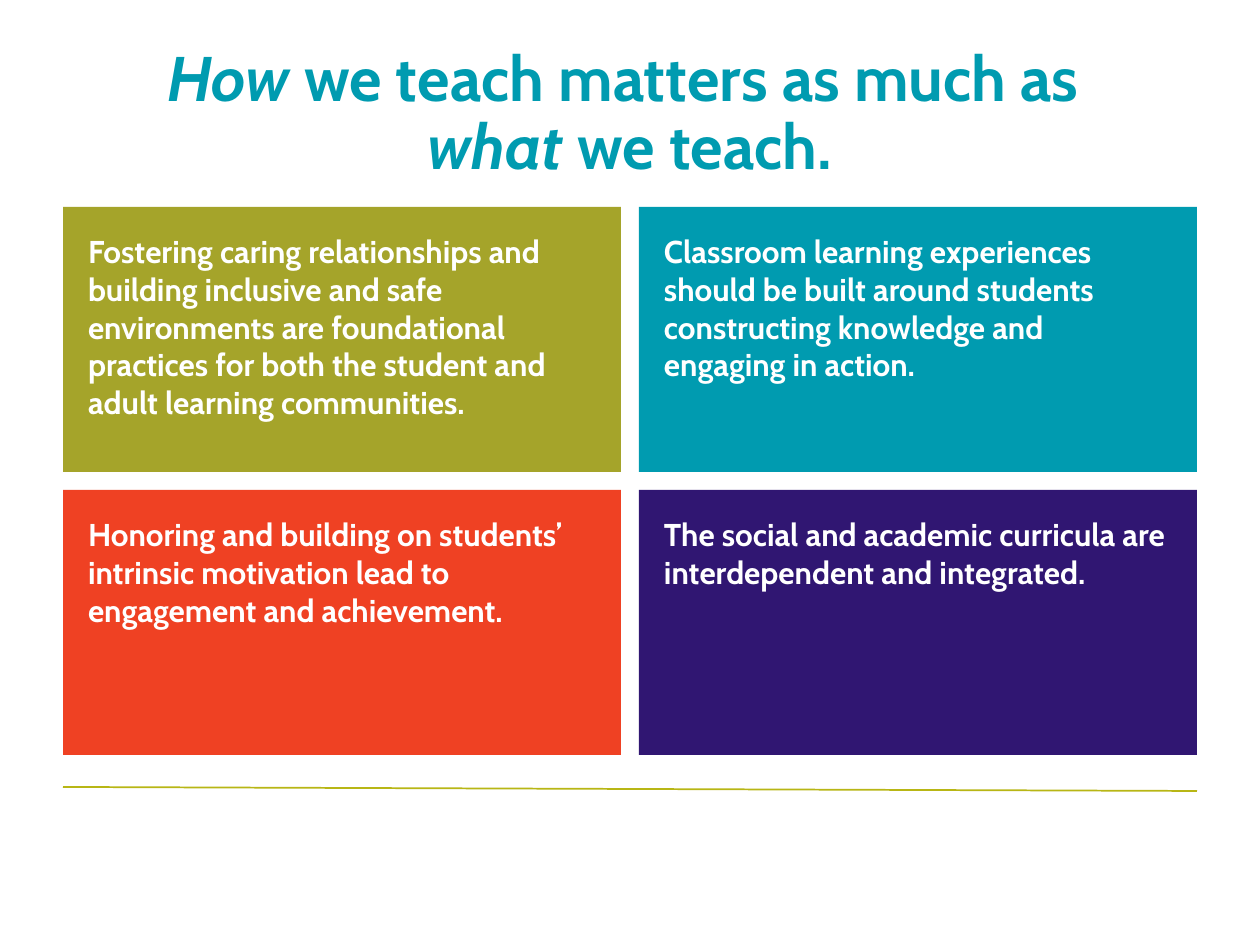
from lxml.etree import SubElement
from pptx import Presentation
from pptx.dml.color import RGBColor
from pptx.enum.shapes import MSO_CONNECTOR as Line, MSO_SHAPE as Shape
from pptx.enum.text import MSO_ANCHOR as Anchor, PP_ALIGN as Align
from pptx.oxml.ns import qn
from pptx.util import Pt

PX = 914400 / 126


def px(*nums):
    """Turn pixel lengths into a list of EMU."""
    return [round(n * PX) for n in nums]


def style(font, size, color):
    font.name, font.size, font.bold = "Cabin", Pt(size), True
    font.color.rgb = RGBColor.from_string(color)


prs = Presentation()
prs.slide_width, prs.slide_height = px(1260, 945)
slide = prs.slides.add_slide(prs.slide_layouts[6])
shapes = slide.shapes

rule = shapes.add_connector(Line.STRAIGHT, *px(63, 787, 1197, 791))
rule.line.color.rgb = RGBColor.from_string("B8B615")
rule.line.width = Pt(1)
SubElement(rule._element.spPr, qn("a:effectLst"))

title = shapes.add_textbox(*px(63, 43, 1134, 144)).text_frame
title.word_wrap = True
title.vertical_anchor = Anchor.MIDDLE
head = title.paragraphs[0]
head.alignment = Align.CENTER
head.line_spacing = 0.9
for word, rest in [("How", " we teach matters as much as "), ("what", " we teach.")]:
    if head.runs:
        head.add_line_break()
    for text, slant in [(word, True), (rest, False)]:
        run = head.add_run()
        run.text = text
        style(run.font, 36, "009BB0")
        run.font.italic = slant

cards = [
    ("A5A42A", "Fostering caring relationships and building inclusive and safe "
     "environments are foundational practices for both the student and adult "
     "learning communities."),
    ("009BB0", "Classroom learning experiences should be built around students "
     "constructing knowledge and engaging in action."),
    ("EF4123", "Honoring and building on students’ intrinsic motivation lead to "
     "engagement and achievement."),
    ("301672", "The social and academic curricula are interdependent and integrated."),
]
wide, high, gap = 558, 265, 18
for i, (color, text) in enumerate(cards):
    row, col = divmod(i, 2)
    left, top = 63 + col * (wide + gap), 207 + row * (high + gap)
    card = shapes.add_shape(Shape.RECTANGLE, *px(left, top, wide, high))
    card.shadow.inherit = False
    card.fill.solid()
    card.fill.fore_color.rgb = RGBColor.from_string(color)
    card.line.fill.background()
    frame = card.text_frame
    frame.word_wrap = True
    frame.vertical_anchor = Anchor.TOP
    frame.margin_left, frame.margin_top, frame.margin_right, frame.margin_bottom = px(25, 25, 25, 25)
    frame.text = text
    para = frame.paragraphs[0]
    para.alignment = Align.LEFT
    style(para.runs[0].font, 18, "FFFFFF")

prs.save("out.pptx")
